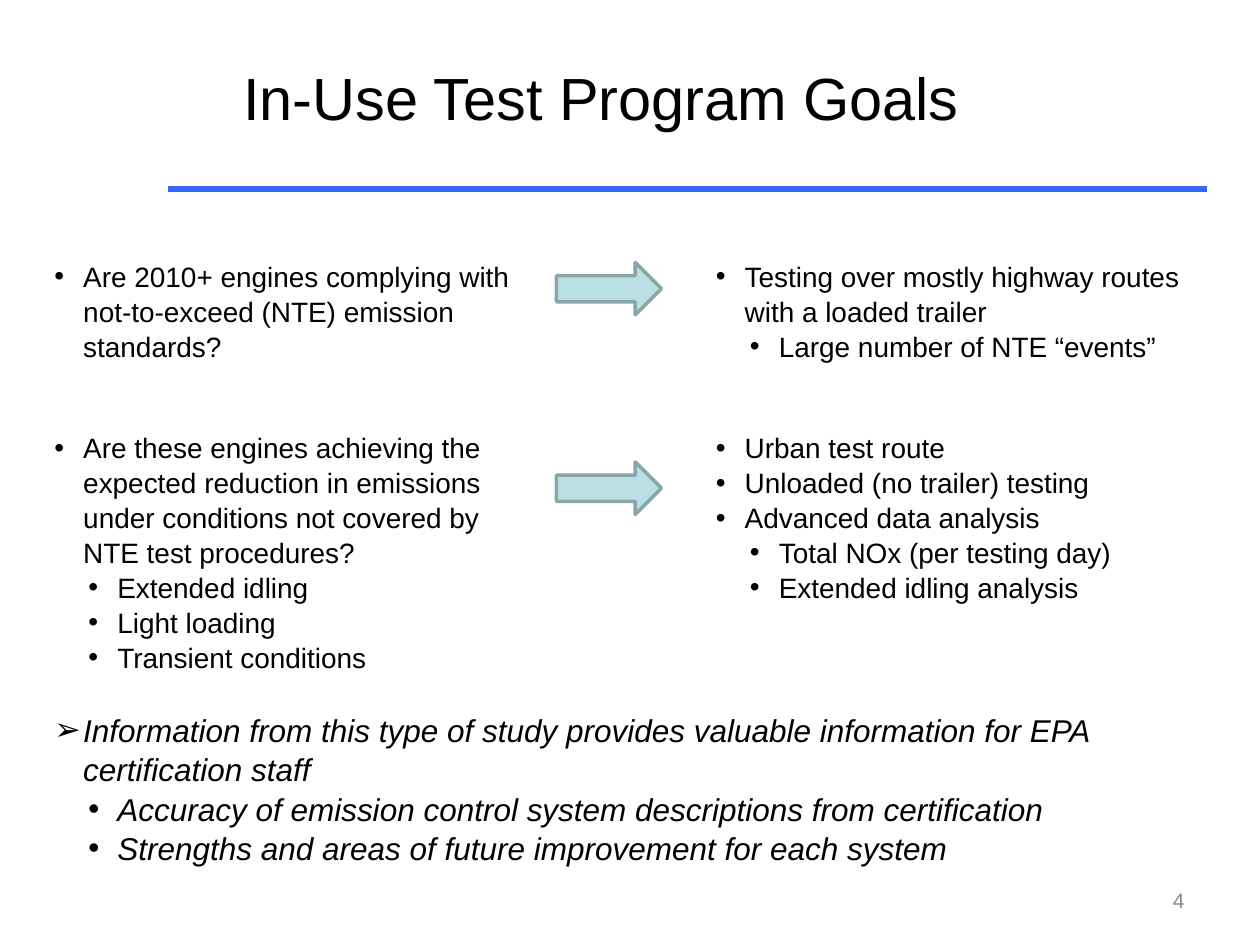
from lxml import etree
from pptx import Presentation
from pptx.dml.color import RGBColor
from pptx.enum.shapes import MSO_CONNECTOR, MSO_SHAPE
from pptx.enum.text import MSO_ANCHOR, PP_ALIGN
from pptx.oxml.ns import qn
from pptx.util import Emu, Pt

STRAIGHT = MSO_CONNECTOR.STRAIGHT
RIGHT_ARROW = MSO_SHAPE.RIGHT_ARROW
TOP, MIDDLE = MSO_ANCHOR.TOP, MSO_ANCHOR.MIDDLE
LEFT, RIGHT = PP_ALIGN.LEFT, PP_ALIGN.RIGHT

COLORS = {
    "text": "000000",
    "number": "8C8C8C",
    "rule": "3366FF",
    "arrow": "BBE0E3",
    "arrow_edge": "8AA6A8",
}


def px(value):
    """Turn pixels (96 to the inch) into EMU."""
    return Emu(value * 9525)


class GoalsPage:
    FONT = "Arial"
    HANGING = 22
    LEVEL_STEP = 26
    LINE_SPACING = 1.04

    def __init__(self, deck):
        self.page = deck.slides.add_slide(deck.slide_layouts[6])

    def color(self, name):
        return RGBColor.from_string(COLORS[name])

    def frame(self, left, top, width, height, anchor=TOP):
        box = self.page.shapes.add_textbox(px(left), px(top), px(width), px(height))
        box.text_frame.word_wrap = True
        box.text_frame.vertical_anchor = anchor
        return box.text_frame

    def span(self, para, text, size, color="text", italic=False):
        span = para.add_run()
        span.text = text
        span.font.name = self.FONT
        span.font.size = Pt(size)
        span.font.italic = italic
        span.font.color.rgb = self.color(color)

    def label(self, area, text, size, color="text", align=LEFT):
        para = self.frame(*area, anchor=MIDDLE).paragraphs[0]
        para.alignment = align
        self.span(para, text, size, color)

    def bullet(self, para, level, mark):
        props = para._p.get_or_add_pPr()
        props.set("marL", str(px(self.HANGING + level * self.LEVEL_STEP)))
        props.set("indent", str(-px(self.HANGING)))
        etree.SubElement(props, qn("a:buFont")).set("typeface", self.FONT)
        etree.SubElement(props, qn("a:buChar")).set("char", mark)

    def bullets(self, area, groups, size, italic=False, first_mark="•"):
        """Each group is a list of (level, text); two lines part the groups."""
        frame = self.frame(*area)
        para = None
        for group in groups:
            for index, (level, text) in enumerate(group):
                first = para is None
                para = frame.paragraphs[0] if first else frame.add_paragraph()
                self.bullet(para, level, first_mark if first else "•")
                para.level = level
                para.line_spacing = self.LINE_SPACING
                if index == 0 and not first:
                    para.space_before = Pt(38)
                self.span(para, text, size, italic=italic)

    def rule(self, left, right, y):
        line = self.page.shapes.add_connector(STRAIGHT, px(left), px(y), px(right), px(y))
        line.line.color.rgb = self.color("rule")
        line.line.width = Pt(3)
        etree.SubElement(line._element.spPr, qn("a:effectLst"))

    def arrow(self, left, top, width, height):
        arrow = self.page.shapes.add_shape(
            RIGHT_ARROW, px(left), px(top), px(width), px(height))
        arrow.shadow.inherit = False
        arrow.fill.solid()
        arrow.fill.fore_color.rgb = self.color("arrow")
        arrow.line.color.rgb = self.color("arrow_edge")
        arrow.line.width = Pt(2)


def main():
    deck = Presentation()
    deck.slide_width, deck.slide_height = px(960), px(720)
    goals = GoalsPage(deck)

    # Heading
    goals.rule(128, 920, 144)
    goals.label((176, 32, 720, 84), "In-Use Test Program Goals", 34)

    # Questions
    goals.bullets((32, 192, 376, 404), [
        [(0, "Are 2010+ engines complying with not-to-exceed (NTE) emission standards?")],
        [(0, "Are these engines achieving the expected reduction in emissions "
             "under conditions not covered by NTE test procedures?"),
         (1, "Extended idling"),
         (1, "Light loading"),
         (1, "Transient conditions")],
    ], 16)

    # Test approaches
    goals.bullets((536, 192, 376, 352), [
        [(0, "Testing over mostly highway routes with a loaded trailer"),
         (1, "Large number of NTE “events”")],
        [(0, "Urban test route"),
         (0, "Unloaded (no trailer) testing"),
         (0, "Advanced data analysis"),
         (1, "Total NOx (per testing day)"),
         (1, "Extended idling analysis")],
    ], 16)

    # Arrows from question to approach
    for top in (200, 352):
        goals.arrow(424, top, 80, 40)

    # Conclusion
    goals.bullets((32, 536, 856, 126), [
        [(0, "Information from this type of study provides valuable information "
             "for EPA certification staff"),
         (1, "Accuracy of emission control system descriptions from certification"),
         (1, "Strengths and areas of future improvement for each system")],
    ], 18, italic=True, first_mark="➢")

    # Page number
    goals.label((688, 667, 224, 38), "4", 12, "number", RIGHT)

    deck.save("out.pptx")


if __name__ == "__main__":
    main()
